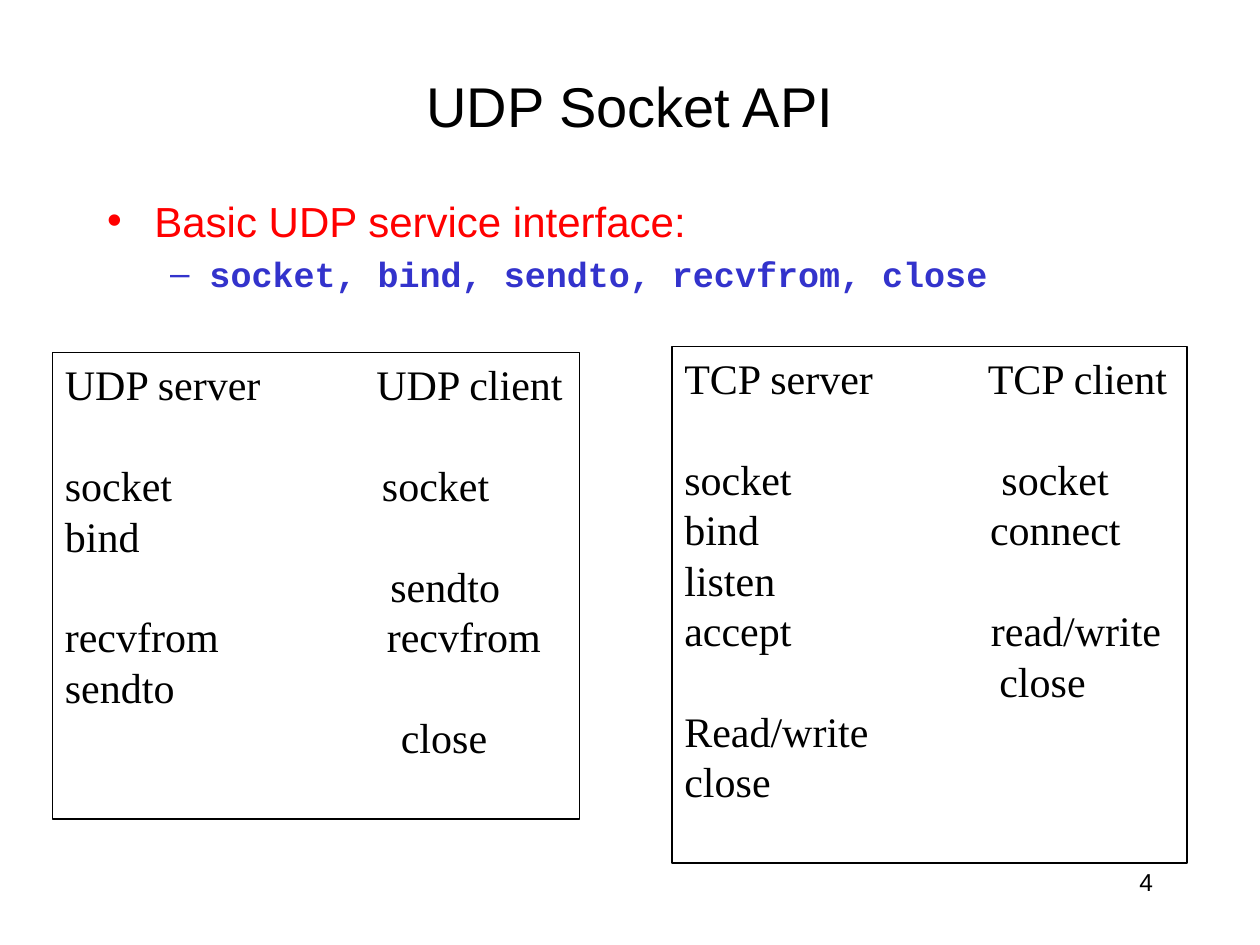
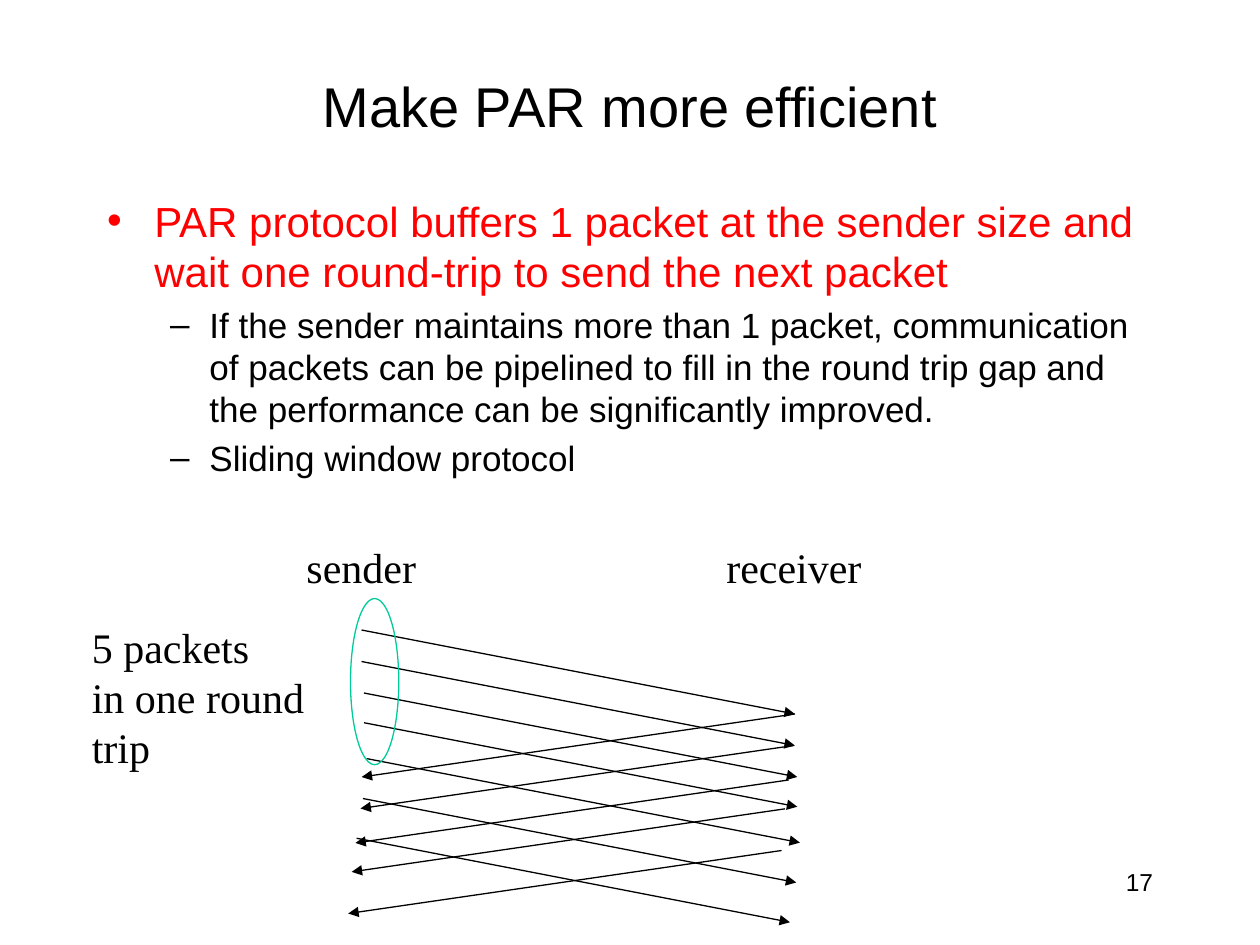
from pptx import Presentation
from pptx.dml.color import RGBColor
from pptx.enum.shapes import MSO_CONNECTOR as Link, MSO_SHAPE as Shape
from pptx.enum.text import MSO_ANCHOR as Anchor, MSO_AUTO_SIZE as Fit, PP_ALIGN as Align
from pptx.oxml.ns import qn
from pptx.util import Pt
from lxml.etree import SubElement as Sub

BLACK = RGBColor(0, 0, 0)
RED = RGBColor(0xFF, 0, 0)
BLUE = RGBColor(0x33, 0x33, 0xCC)
GREEN = RGBColor(0, 0xCC, 0x99)
SANS, SERIF, MONO = "Arial", "Times New Roman", "Courier New"
THIN = Pt(0.75)
GAP = Pt(28.8)

UDP = [("UDP server", "UDP client", 178), ("socket", "socket", 181.2),
       ("bind", "", 0), ("", "sendto", 186), ("recvfrom", "recvfrom", 184),
       ("sendto", "", 0), ("", "close", 192)]
TCP = [("TCP server", "TCP client", 173.4), ("socket", "socket", 181.2),
       ("bind", "connect", 174.7), ("listen", "", 0),
       ("accept", "read/write", 175.2), ("", "close", 180),
       ("Read/write", "", 0), ("close", "", 0)]
SENDS = [(206.6, 360), (206.6, 378), (208, 396), (208, 413),
         (209.5, 433.5), (207.4, 456.3), (203.8, 479)]
ACKS = [(454.3, 408), (453.6, 426), (450.7, 445.7), (448.6, 462.2), (446.6, 486)]
SPAN, DROP, RISE = 247.6, 48, 36


def place(shape, left, top, width, height):
    shape.left, shape.top = Pt(left), Pt(top)
    shape.width, shape.height = Pt(width), Pt(height)


def add_run(para, text, size, face, color=BLACK, bold=False):
    run = para.add_run()
    run.text = text
    font = run.font
    font.size, font.name, font.bold = Pt(size), face, bold
    font.color.rgb = color


def next_para(frame, index):
    return frame.add_paragraph() if index else frame.paragraphs[0]


def add_page(deck, title, number, items, height):
    slide = deck.slides.add_slide(deck.slide_layouts[1])
    head, body = slide.placeholders
    place(head, 54, 30, 612, 60)
    head.text_frame.vertical_anchor = Anchor.MIDDLE
    head.text_frame.auto_size = Fit.NONE
    para = head.text_frame.paragraphs[0]
    para.alignment = Align.CENTER
    add_run(para, title, 32, SANS)
    place(body, 54, 108, 612, height)
    body.text_frame.auto_size = Fit.NONE
    for index, (level, text, face, color) in enumerate(items):
        para = next_para(body.text_frame, index)
        para.level = level
        if index == 0:
            para.space_before = Pt(0)
        add_run(para, text, 20 if level else 24, face, color, face == MONO)
    add_label(slide, 516, 492, 150, 36, [number], 14, SANS, Align.RIGHT)
    return slide


def add_label(slide, left, top, width, height, lines, size=24, face=SERIF, align=Align.LEFT):
    box = slide.shapes.add_textbox(Pt(left), Pt(top), Pt(width), Pt(height))
    frame = box.text_frame
    frame.word_wrap = align == Align.RIGHT
    for index, line in enumerate(lines):
        para = next_para(frame, index)
        para.alignment = align
        add_run(para, line, size, face)


def add_outline(slide, kind, left, top, width, height, color):
    shape = slide.shapes.add_shape(kind, Pt(left), Pt(top), Pt(width), Pt(height))
    shape.shadow.inherit = False
    shape.fill.background()
    shape.line.color.rgb = color
    shape.line.width = THIN
    return shape


def set_tab(para, stop):
    tabs = Sub(para._p.get_or_add_pPr(), qn("a:tabLst"))
    Sub(tabs, qn("a:tab"), pos=str(int(Pt(stop))), algn="l")


def add_panel(slide, left, top, width, height, rows):
    frame = add_outline(slide, Shape.RECTANGLE, left, top, width, height, BLACK).text_frame
    frame.word_wrap = True
    frame.vertical_anchor = Anchor.TOP
    for index, (server, client, stop) in enumerate(rows):
        para = next_para(frame, index)
        if client:
            set_tab(para, stop)
        para.alignment = Align.LEFT
        if index == 1:
            para.space_before = GAP
        if server:
            add_run(para, server, 24, SERIF)
        if client:
            add_run(para, "\t" + client, 24, SERIF)


def add_arrow(slide, x, y, across, down):
    arrow = slide.shapes.add_connector(Link.STRAIGHT, Pt(x), Pt(y), Pt(x + across), Pt(y + down))
    arrow.line.color.rgb = BLACK
    arrow.line.width = THIN
    Sub(arrow.line._get_or_add_ln(), qn("a:tailEnd"), type="triangle")
    Sub(arrow._element.spPr, qn("a:effectLst"))


def add_sockets(deck):
    slide = add_page(deck, "UDP Socket API", "4", [
        (0, "Basic UDP service interface:", SANS, RED),
        (1, "socket, bind, sendto, recvfrom, close", MONO, BLUE),
    ], 372)
    add_panel(slide, 30, 201.6, 301, 266.4, UDP)
    add_panel(slide, 384, 198, 294.4, 295.2, TCP)


def add_window(deck):
    slide = add_page(deck, "Make PAR more efficient", "17", [
        (0, "PAR protocol buffers 1 packet at the sender size and wait one "
            "round-trip to send the next packet", SANS, RED),
        (1, "If the sender maintains more than 1 packet, communication of packets "
            "can be pipelined to fill in the round trip gap and the performance "
            "can be significantly improved.", SANS, BLACK),
        (1, "Sliding window protocol", SANS, BLACK),
    ], 180)
    add_label(slide, 168, 306, 77.8, 36, ["sender"])
    add_label(slide, 408, 306, 92, 36, ["receiver"])
    for x, y in SENDS:
        add_arrow(slide, x, y, SPAN, DROP)
    for x, y in ACKS:
        add_arrow(slide, x, y, -SPAN, RISE)
    add_outline(slide, Shape.OVAL, 200.3, 342, 27.6, 95, GREEN)
    add_label(slide, 45.4, 351.4, 136.8, 94.3, ["5 packets", "in one round", "trip"])


def main():
    deck = Presentation()
    deck.slide_width, deck.slide_height = Pt(720), Pt(540)
    add_sockets(deck)
    add_window(deck)
    deck.save("out.pptx")


if __name__ == "__main__":
    main()
